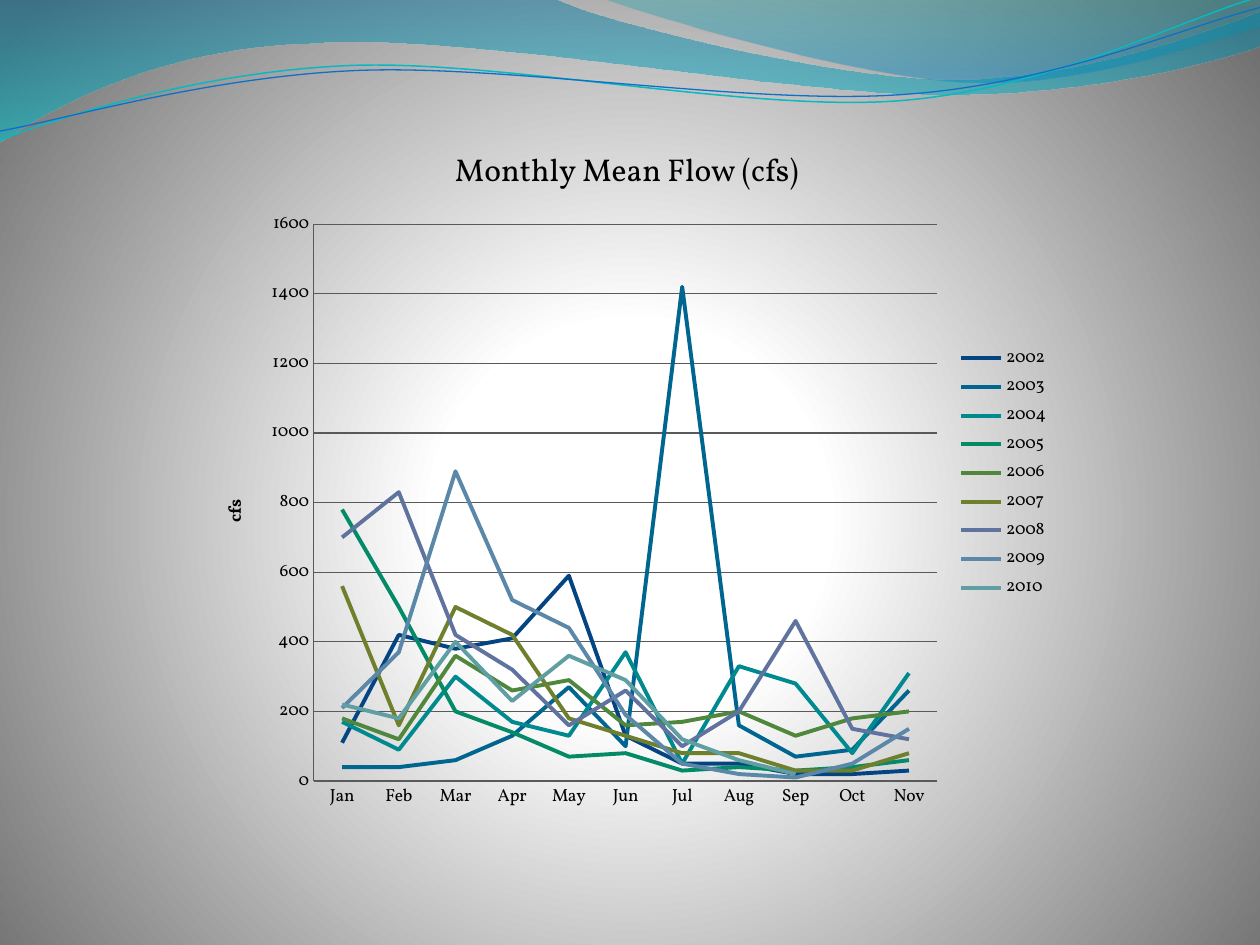
import dataclasses
import math

import lxml.etree
import pptx
import pptx.chart.data
import pptx.dml.color
import pptx.enum.chart
import pptx.oxml
import pptx.oxml.ns
import pptx.util

Inches = pptx.util.Inches
qn = pptx.oxml.ns.qn


@dataclasses.dataclass
class Theme:
    """Hold the colours, font and type sizes."""
    font: str = "Vollkorn"
    ink: str = "000000"
    grid: str = "595959"
    small: float = 10
    large: float = 18
    thick: float = 2.25
    thin: float = 0.75
    back: tuple = ((0, "FFFFFF", 100), (25, "FFFFFF", 100), (100, "707070", 100))
    wave: tuple = ((0, "0074A1", 45), (100, "00C6CF", 55))
    crest: tuple = ((0, "00A1A9", 30), (80, "008BBF", 45))
    aqua: str = "0AB8BF"
    blue: str = "0F6FC6"
    lines: tuple = ("044483", "00658F", "008A90", "048A66", "4F873C",
                    "6E802D", "60739F", "5B87A8", "5F9FA3")


WAVE = [(0, 0), (4.4, -0.01), (4.76, 0.17, 6.64, 0.63, 7.58, 0.63),
        (8.53, 0.63, 9.58, 0.26, 10, 0.09), (10.01, 0.36),
        (9.83, 0.44, 8.7, 0.76, 7.46, 0.75), (6.22, 0.75, 3.82, 0.28, 2.57, 0.34),
        (1.29, 0.36, 0.46, 0.83, -0.01, 1.13), (0, 0)]
CREST = [(4.79, -0.01), (5.09, 0.11, 6.82, 0.62, 7.69, 0.65),
         (8.56, 0.69, 9.61, 0.32, 10, 0.21), (10, 0), (4.79, -0.01)]
UPPER = [(0, 1.11), (0.48, 0.93, 1.58, 0.57, 2.77, 0.52),
         (3.95, 0.47, 5.93, 0.89, 7.13, 0.8), (8.33, 0.71, 9.38, 0.15, 9.98, -0.02)]
LOWER = [(0, 1.04), (0.47, 0.96, 1.64, 0.61, 2.83, 0.56),
         (4.03, 0.51, 5.97, 0.84, 7.17, 0.75), (8.36, 0.67, 9.41, 0.21, 10, 0.06)]

MONTHS = "Jan Feb Mar Apr May Jun Jul Aug Sep Oct Nov".split()
FLOWS = {
    "2002": (110, 420, 380, 410, 590, 130, 50, 50, 20, 20, 30),
    "2003": (40, 40, 60, 130, 270, 100, 1420, 160, 70, 90, 260),
    "2004": (170, 90, 300, 170, 130, 370, 50, 330, 280, 80, 310),
    "2005": (780, 500, 200, 140, 70, 80, 30, 40, 30, 40, 60),
    "2006": (180, 120, 360, 260, 290, 160, 170, 200, 130, 180, 200),
    "2007": (560, 160, 500, 420, 180, 130, 80, 80, 30, 30, 80),
    "2008": (700, 830, 420, 320, 160, 260, 100, 200, 460, 150, 120),
    "2009": (210, 370, 890, 520, 440, 190, 50, 20, 10, 50, 150),
    "2010": (220, 180, 400, 230, 360, 290, 120, 60, 20, None, None),
}


def turn(path, angle, hub):
    """Turn all points of a path clockwise about the hub."""
    cos, sin = math.cos(math.radians(angle)), math.sin(math.radians(angle))
    turned = []
    for part in path:
        spots = []
        for x, y in zip(part[::2], part[1::2]):
            dx, dy = x - hub[0], y - hub[1]
            spots += [hub[0] + dx * cos - dy * sin, hub[1] + dx * sin + dy * cos]
        turned.append(tuple(spots))
    return turned


class Painter:
    """Draw each kind of element on one slide."""

    def __init__(self, slide, theme):
        """Keep the slide and its style."""
        self.slide, self.theme = slide, theme

    def blend(self, fill, root, stops, shade):
        """Give a fill the gradient stops and the shading element."""
        fill.gradient()
        old = root.find(".//" + qn("a:gradFill"))
        marks = "".join(
            f'<a:gs pos="{pos * 1000}"><a:srgbClr val="{tint}">'
            f'<a:alpha val="{alpha * 1000}"/></a:srgbClr></a:gs>'
            for pos, tint, alpha in stops)
        new = pptx.oxml.parse_xml(
            f'<a:gradFill {pptx.oxml.ns.nsdecls("a")} rotWithShape="1">'
            f'<a:gsLst>{marks}</a:gsLst>{shade}</a:gradFill>')
        old.getparent().replace(old, new)

    def backdrop(self):
        """Fill the slide with a round glow."""
        self.blend(self.slide.background.fill, self.slide.element, self.theme.back,
                   '<a:path path="circle"><a:fillToRect l="10000" t="110000" '
                   'r="10000" b="100000"/></a:path>')

    def outline(self, path, closed):
        """Build a freeform of straight and cubic parts."""
        spots = [(Inches(x), Inches(y)) for part in path
                 for x, y in zip(part[::2], part[1::2])]
        pen = self.slide.shapes.build_freeform(*spots[0])
        pen.add_line_segments(spots[1:], close=closed)
        shape = pen.convert_to_shape()
        shape.shadow.inherit = False
        legs = iter(shape.element.findall(".//" + qn("a:lnTo")))
        for part in path[1:]:
            leg = next(legs)
            if len(part) == 6:
                curve = lxml.etree.Element(qn("a:cubicBezTo"))
                leg.addprevious(curve)
                for piece in (leg, next(legs), next(legs)):
                    curve.append(piece[0])
                    piece.getparent().remove(piece)
        return shape

    def wave(self, path, stops):
        """Draw a filled wave."""
        shape = self.outline(path, True)
        shape.line.fill.background()
        self.blend(shape.fill, shape.element, stops, '<a:lin ang="5400000" scaled="0"/>')

    def ripple(self, path, tint, width, hub, tilt=2.7):
        """Draw a thin open curve, tilted to the left."""
        shape = self.outline(turn(path, tilt, hub), False)
        shape.rotation = -tilt
        shape.fill.background()
        self.stroke(shape.line, tint, width)

    def stroke(self, line, tint, width):
        """Set the colour and width of a line."""
        line.color.rgb = pptx.dml.color.RGBColor.from_string(tint)
        line.width = pptx.util.Pt(width)

    def style(self, font, size, bold=False):
        """Set the look of some text."""
        font.name, font.size, font.bold = self.theme.font, pptx.util.Pt(size), bold
        font.color.rgb = pptx.dml.color.RGBColor.from_string(self.theme.ink)

    def label(self, title, text, size, bold=False):
        """Write a chart or axis title."""
        title.text_frame.text = text
        self.style(title.text_frame.paragraphs[0].font, size, bold)

    def place(self, chart, **box):
        """Fix the inner plot area, in shares of the chart."""
        area = chart.element.find(".//" + qn("c:plotArea"))
        for old in area.findall(qn("c:layout")):
            area.remove(old)
        layout = lxml.etree.Element(qn("c:layout"))
        manual = lxml.etree.SubElement(layout, qn("c:manualLayout"))
        pairs = {"layoutTarget": "inner", "xMode": "edge", "yMode": "edge", **box}
        for name, value in pairs.items():
            lxml.etree.SubElement(manual, qn("c:" + name)).set("val", str(value))
        area.insert(0, layout)

    def graph(self, heading, unit, cats, rows, box):
        """Add the line chart."""
        look, kinds = self.theme, pptx.enum.chart
        data = pptx.chart.data.CategoryChartData()
        data.categories = cats
        for name, values in rows.items():
            data.add_series(name, values)
        chart = self.slide.shapes.add_chart(
            kinds.XL_CHART_TYPE.LINE, *map(Inches, box), data).chart
        self.style(chart.font, look.small)
        self.label(chart.chart_title, heading, look.large)
        chart.chart_title.include_in_layout = False
        chart.has_legend = True
        chart.legend.position = kinds.XL_LEGEND_POSITION.RIGHT
        chart.legend.include_in_layout = False
        for axis in (chart.category_axis, chart.value_axis):
            axis.major_tick_mark = axis.minor_tick_mark = kinds.XL_TICK_MARK.NONE
            self.stroke(axis.format.line, look.grid, look.thin)
        scale = chart.value_axis
        scale.minimum_scale, scale.maximum_scale, scale.major_unit = 0, 1600, 200
        self.stroke(scale.major_gridlines.format.line, look.grid, look.thin)
        self.label(scale.axis_title, unit, look.small, True)
        plot = chart.plots[0]
        plot.vary_by_categories = False
        for row, tint in zip(plot.series, look.lines):
            row.smooth = False
            row.marker.style = kinds.XL_MARKER_STYLE.NONE
            self.stroke(row.format.line, tint, look.thick)
        wide, high = box[2:]
        self.place(chart, x=0.92 / wide, y=0.82 / high, w=4.95 / wide, h=4.42 / high)


def main():
    """Build and save the slide."""
    deck = pptx.Presentation()
    deck.slide_width, deck.slide_height = Inches(10), Inches(7.5)
    theme = Theme()
    painter = Painter(deck.slides.add_slide(deck.slide_layouts[6]), theme)
    painter.backdrop()
    painter.wave(WAVE, theme.wave)
    painter.wave(CREST, theme.crest)
    painter.ripple(UPPER, theme.aqua, 0.85, (4.99, 0.57))
    painter.ripple(LOWER, theme.blue, theme.thin, (5, 0.59))
    painter.graph("Monthly Mean Flow (cfs) ", "cfs", MONTHS, FLOWS,
                  (1.57, 0.96, 6.86, 5.59))
    deck.save("out.pptx")


if __name__ == "__main__":
    main()
